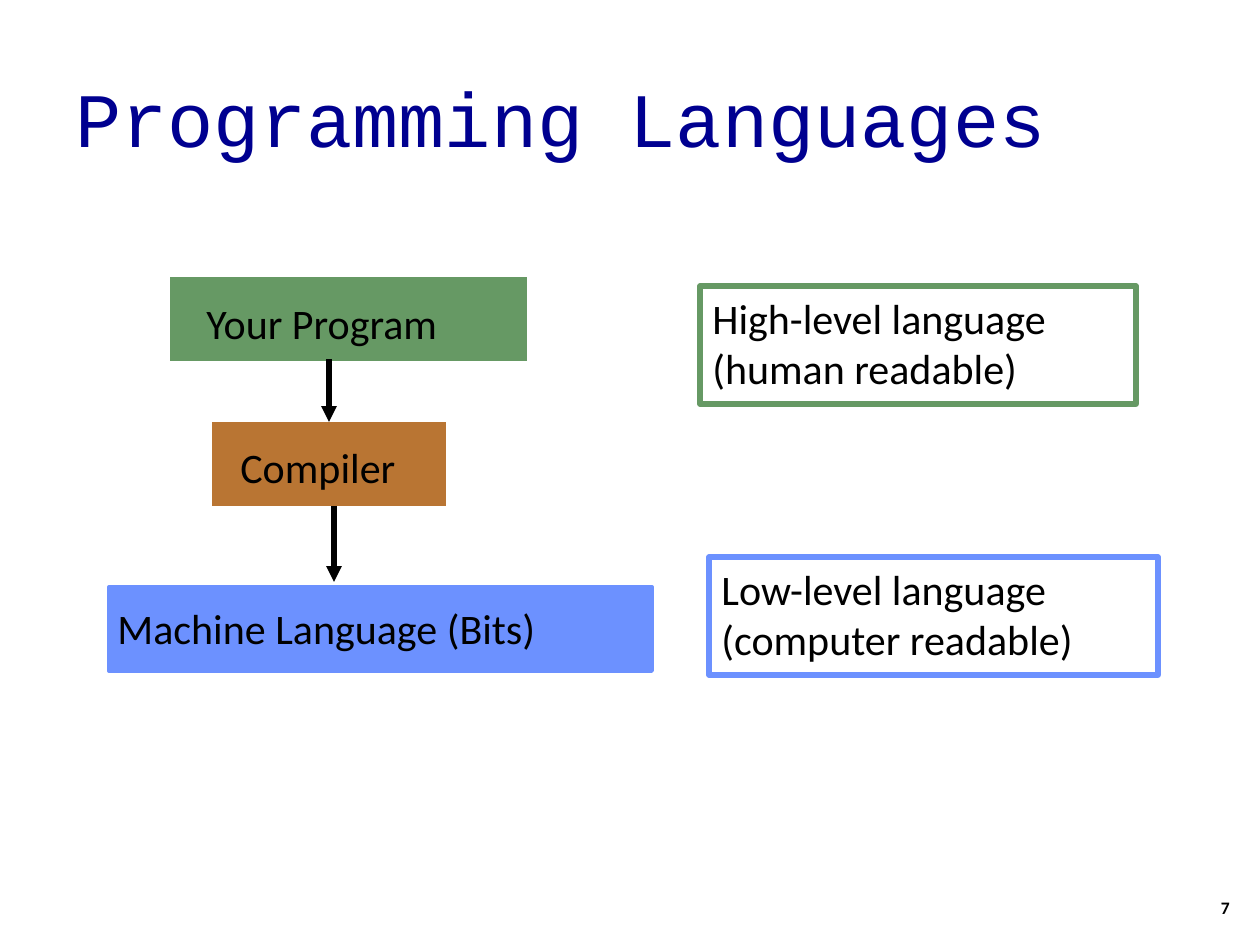
from pptx import Presentation
from pptx.dml.color import RGBColor
from pptx.enum.shapes import MSO_CONNECTOR, MSO_SHAPE
from pptx.enum.text import MSO_ANCHOR, PP_ALIGN
from pptx.oxml.ns import qn
from pptx.util import Pt
from lxml import etree

RECT = MSO_SHAPE.RECTANGLE
LINE = MSO_CONNECTOR.STRAIGHT
MIDDLE, TOP = MSO_ANCHOR.MIDDLE, MSO_ANCHOR.TOP
LEFT, RIGHT = PP_ALIGN.LEFT, PP_ALIGN.RIGHT
PX = 914400 / 126
TOP_SIDE = 0

COLORS = {"navy": "000090", "black": "000000", "green": "669964",
          "brown": "B97533", "blue": "6C91FF"}

# label, fill, line width in points, block box, label box
STAGES = [
    ("Your Program", "green", 0, (170, 277, 357, 84), (194, 291, 300, 63)),
    ("Compiler", "brown", 0, (212, 422, 234, 84), (228, 435, 202, 63)),
    ("Machine Language (Bits)", "blue", 2.25,
     (109, 587, 543, 84), (105, 596, 525, 63)),
]
# x, top, bottom, index of the stage joined at its top middle
ARROWS = [(329, 359, 422, 1), (334, 506, 582, None)]
# lines, frame colour, box
NOTES = [
    (["High-level language", "(human readable)"], "green",
     (700, 286, 436, 118)),
    (["Low-level language", "(computer readable)"], "blue",
     (709, 557, 449, 118)),
]


def emu(*vals):
    return [round(v * PX) for v in vals]


def color(name):
    return RGBColor.from_string(COLORS[name])


def write(shape, lines, size=24, font="Calibri", ink="black",
          bold=False, align=LEFT, anchor=TOP):
    frame = shape.text_frame
    frame.word_wrap = True
    frame.vertical_anchor = anchor
    frame.text = "\n".join(lines)
    for para in frame.paragraphs:
        para.alignment = align
        para.font.size = Pt(size)
        para.font.name = font
        para.font.bold = bold
        para.font.color.rgb = color(ink)


def add_text(slide, box, text, **style):
    write(slide.shapes.add_textbox(*emu(*box)), [text], **style)


def add_rect(slide, box, fill=None, line=None, width=0):
    rect = slide.shapes.add_shape(RECT, *emu(*box))
    rect.shadow.inherit = False
    if fill:
        rect.fill.solid()
        rect.fill.fore_color.rgb = color(fill)
    else:
        rect.fill.background()
    if width:
        rect.line.color.rgb = color(line)
        rect.line.width = Pt(width)
    else:
        rect.line.fill.background()
    return rect


def add_arrow(slide, x, top, bottom, target):
    arrow = slide.shapes.add_connector(LINE, *emu(x, top, x, bottom))
    if target is not None:
        arrow.end_connect(target, TOP_SIDE)
    arrow.line.color.rgb = color("black")
    arrow.line.width = Pt(3)
    etree.SubElement(arrow.line._get_or_add_ln(), qn("a:tailEnd"),
                     type="triangle")
    etree.SubElement(arrow._element.spPr, qn("a:effectLst"))


def main():
    prs = Presentation()
    prs.slide_width, prs.slide_height = emu(1260, 945)
    slide = prs.slides.add_slide(prs.slide_layouts[6])

    add_text(slide, (63, 38, 1134, 158), "Programming Languages", size=44,
             font="Courier New", ink="navy", anchor=MIDDLE)

    blocks = []
    for label, fill, width, box, spot in STAGES:
        blocks.append(add_rect(slide, box, fill, fill, width))
        add_text(slide, spot, label)
    for x, top, bottom, stage in ARROWS:
        target = None if stage is None else blocks[stage]
        add_arrow(slide, x, top, bottom, target)
    for lines, frame, box in NOTES:
        write(add_rect(slide, box, line=frame, width=3), lines)

    add_text(slide, (1192, 883, 50, 50), "7", size=10, bold=True,
             align=RIGHT, anchor=MIDDLE)
    prs.save("out.pptx")


if __name__ == "__main__":
    main()
